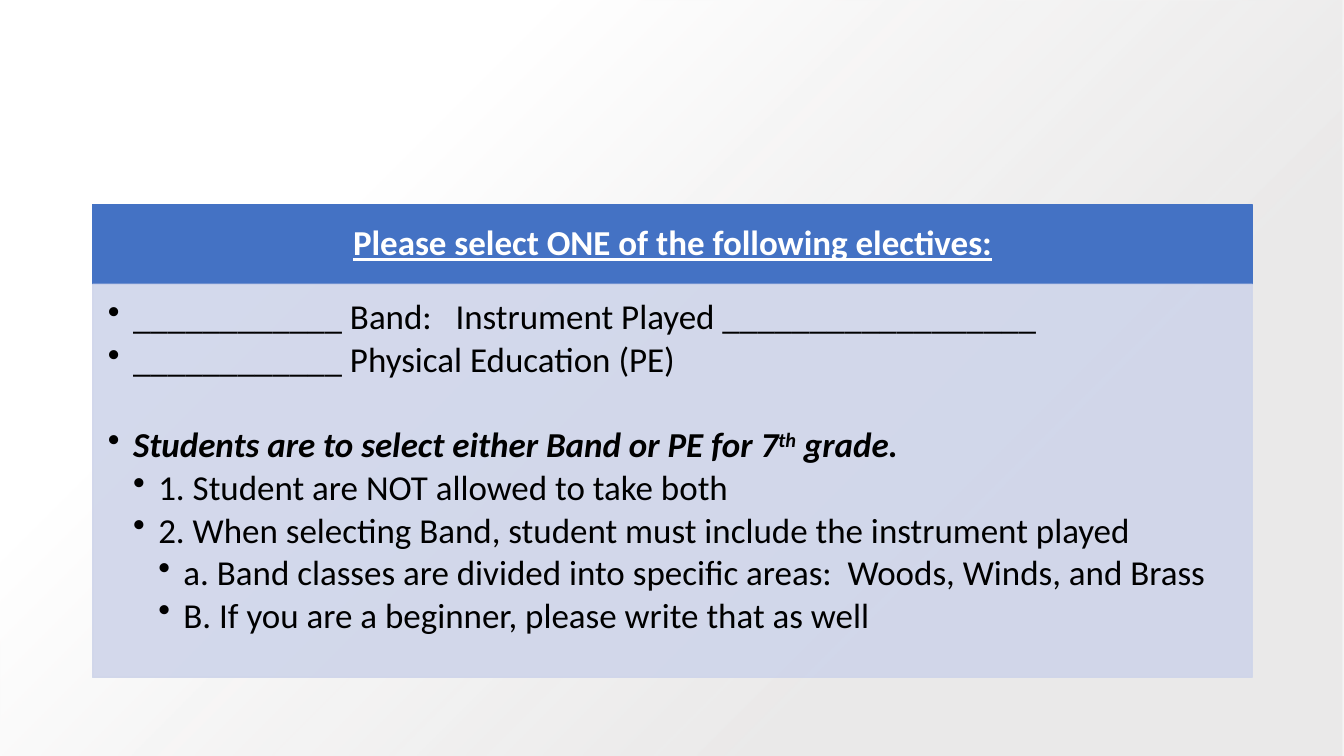
from lxml.etree import SubElement
from pptx import Presentation
from pptx.dml.color import RGBColor
from pptx.enum.shapes import MSO_SHAPE
from pptx.enum.text import MSO_ANCHOR, PP_ALIGN
from pptx.oxml import parse_xml
from pptx.oxml.ns import nsdecls, qn
from pptx.util import Inches, Pt

COLORS = {"header": "4472C4", "body": "CFD5EA", "white": "FFFFFF",
          "black": "000000", "grey": "E7E6E6"}
FONT, SIZE = "Calibri", 25
INDENT, LINE_GAP, SECTION_GAP = 0.25, 3.4, 30.9
TITLE = "Please select ONE of the following electives:"
CHOICES = [
    (1, "____________ Band:   Instrument Played __________________"),
    (1, "____________ Physical Education (PE)"),
]
RULE = [("Students are to select either Band or PE for 7", 0), ("th", 30000), (" grade.", 0)]
DETAILS = [
    (2, "1. Student are NOT allowed to take both"),
    (2, "2. When selecting Band, student must include the instrument played"),
    (3, "a. Band classes are divided into specific areas:  Woods, Winds, and Brass"),
    (3, "B. If you are a beginner, please write that as well"),
]


def add_panel(page, box, color, insets, anchor, opacity=100):
    """Draw a filled rectangle and return its shape, ready for text."""
    panel = page.shapes.add_shape(MSO_SHAPE.RECTANGLE, *map(Inches, box))
    panel.shadow.inherit = False
    panel.line.width = Pt(1)
    for fill in (panel.fill, panel.line.fill):
        fill.solid()
        fill.fore_color.rgb = RGBColor.from_string(COLORS[color])
    if opacity < 100:
        for tint in panel._element.spPr.iter(qn("a:srgbClr")):
            SubElement(tint, qn("a:alpha"), val=str(opacity * 1000))
    frame = panel.text_frame
    frame.word_wrap = True
    frame.vertical_anchor = anchor
    (frame.margin_left, frame.margin_top,
     frame.margin_right, frame.margin_bottom) = map(Inches, insets)
    return panel


def add_span(para, text, color, bold=False, italic=False, underline=False, baseline=0):
    """Add one formatted run to a paragraph."""
    span = para.add_run()
    span.text = text
    font = span.font
    font.name, font.size = FONT, Pt(SIZE)
    font.bold, font.italic, font.underline = bold, italic, underline
    font.color.rgb = RGBColor.from_string(COLORS[color])
    if baseline:
        span._r.get_or_add_rPr().set("baseline", str(baseline))


def add_bullet(frame, level):
    """Return a bulleted paragraph indented for its level."""
    first = frame.paragraphs[0]
    para = frame.add_paragraph() if first.runs else first
    para.alignment = PP_ALIGN.LEFT
    para.level = level - 1
    para.line_spacing = 0.9
    para.space_after = Pt(LINE_GAP)
    properties = para._p.get_or_add_pPr()
    properties.set("marL", str(Inches(INDENT * level)))
    properties.set("indent", str(-Inches(INDENT)))
    SubElement(properties, qn("a:buChar"), char="•")
    return para


def draw_backdrop(page, box):
    """Cover the box with a soft glow from its lower right corner."""
    backdrop = page.shapes.add_shape(MSO_SHAPE.RECTANGLE, *map(Inches, box))
    backdrop.shadow.inherit = False
    backdrop.line.fill.background()
    backdrop.fill.background()
    properties = backdrop._element.spPr
    gradient = parse_xml(
        f'<a:gradFill {nsdecls("a")} rotWithShape="1"><a:gsLst>'
        f'<a:gs pos="28000"><a:srgbClr val="{COLORS["grey"]}"><a:alpha val="84000"/></a:srgbClr></a:gs>'
        f'<a:gs pos="74000"><a:srgbClr val="{COLORS["white"]}"/></a:gs></a:gsLst>'
        '<a:path path="circle"><a:fillToRect l="100000" t="100000"/></a:path></a:gradFill>')
    properties.replace(properties.find(qn("a:noFill")), gradient)


def draw_electives(page, box):
    """Place the header band and the list below it in the box."""
    left, top, width, height = box
    header_height = height * 0.1685
    header = add_panel(page, (left, top, width, header_height), "header",
                       (0.19, 0.11, 0.19, 0.11), MSO_ANCHOR.MIDDLE)
    para = header.text_frame.paragraphs[0]
    para.alignment = PP_ALIGN.CENTER
    para.line_spacing = 0.9
    add_span(para, TITLE, "white", bold=True, underline=True)

    body = add_panel(page, (left, top + header_height, width, height - header_height),
                     "body", (0.15, 0.15, 0.19, 0.22), MSO_ANCHOR.TOP, opacity=90)
    frame = body.text_frame
    for level, text in CHOICES:
        add_span(add_bullet(frame, level), text, "black")
    rule = add_bullet(frame, 1)
    rule.space_before = Pt(SECTION_GAP)
    for text, baseline in RULE:
        add_span(rule, text, "black", bold=True, italic=True, baseline=baseline)
    for level, text in DETAILS:
        add_span(add_bullet(frame, level), text, "black")


def main():
    """Build and save the deck."""
    deck = Presentation()
    deck.slide_width, deck.slide_height = Inches(13.33), Inches(7.5)
    page = deck.slides.add_slide(deck.slide_layouts[6])
    draw_backdrop(page, (0, 0, 13.33, 7.5))
    draw_electives(page, (0.92, 2.03, 11.5, 4.69))
    deck.save("out.pptx")


if __name__ == "__main__":
    main()
